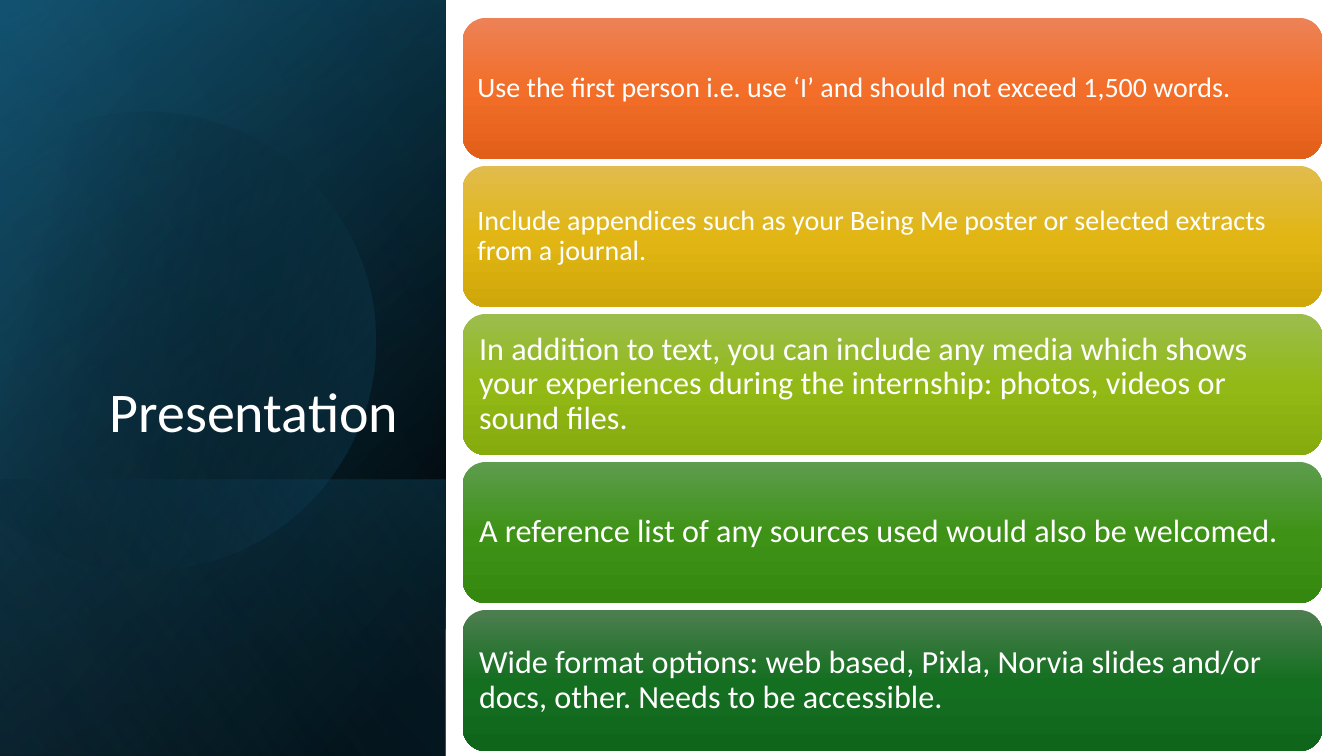
"""Build the Presentation guidance slide: a dark title panel beside five cards."""
import copy
import math

import pptx
import pptx.dml.color
import pptx.enum.shapes
import pptx.enum.text
import pptx.oxml
import pptx.oxml.ns
import pptx.util

Cm = pptx.util.Cm
Anchor = pptx.enum.text.MSO_ANCHOR
Align = pptx.enum.text.PP_ALIGN
Shape = pptx.enum.shapes.MSO_SHAPE

PANEL = (-3.91, 3.91, 19.05, 11.23)
LOWER_PANEL = (2.13, 9.96, 6.96, 11.23)
CARD_LEFT, CARD_TOP, CARD_WIDTH, CARD_HEIGHT, CARD_PITCH = 11.66, 0.45, 21.67, 3.56, 3.73

PANEL_LAYERS = [
    (PANEL, 50, [(8, "000000", 100), (100, "104862", 100)]),
    (PANEL, 30, [(0, "000000", 0), (99, "156082", 46)]),
    (LOWER_PANEL, 130, [(2, "156082", 29), (100, "000000", 30)]),
]
SHEEN = (PANEL, 120, [(0, "000000", 0), (99, "46B1E1", 11)])
DISC_STOPS = [(29, "000000", 0), (100, "156082", 43)]

CARDS = [
    ("Use the first person i.e. use ‘I’ and should not exceed 1,500 words.",
     20, 0.2, ("ED8257", "F26E29", "E25F1A")),
    ("Include appendices such as your Being Me poster or selected extracts from a journal.",
     20, 0.2, ("E1BC4E", "E1B614", "D0A70A")),
    ("In addition to text, you can include any media which shows your experiences "
     "during the internship: photos, videos or sound files.",
     23, 0.24, ("9CBD4E", "92B916", "85AB0D")),
    ("A reference list of any sources used would also be welcomed.",
     23, 0.24, ("5E9C4E", "3E9317", "35880F")),
    ("Wide format options: web based, Pixla, Norvia slides and/or docs, other. "
     "Needs to be accessible.",
     23, 0.24, ("4D7E50", "156F21", "0F661B")),
]


def colour(hex_value):
    return pptx.dml.color.RGBColor.from_string(hex_value)


def apply_format(target, values):
    for name, value in values.items():
        setattr(target, name, value)


class SlideBuilder:
    """Hold the text style and the current slide, and add its elements."""

    def __init__(self, slide, font="Calibri", text_colour="FFFFFF"):
        self.slide = slide
        self.font = font
        self.text_colour = text_colour

    def gradient(self, shape, angle, stops):
        shape.shadow.inherit = False
        shape.line.fill.background()
        shape.fill.gradient()
        shape.fill.gradient_angle = 360 - angle
        stop_list = shape.element.spPr.find(".//" + pptx.oxml.ns.qn("a:gsLst"))
        for _ in stops[2:]:
            stop_list.append(copy.deepcopy(stop_list[0]))
        for stop, element, (position, hex_value, opacity) in zip(
                shape.fill.gradient_stops, stop_list, stops):
            stop.position = position / 100
            stop.color.rgb = colour(hex_value)
            if opacity < 100:
                element[0].append(pptx.oxml.parse_xml(
                    f'<a:alpha {pptx.oxml.ns.nsdecls("a")} val="{opacity * 1000}"/>'))

    def panel(self, box, angle, stops):
        layer = self.slide.shapes.add_shape(Shape.RECTANGLE, *map(Cm, box))
        layer.rotation = 90
        layer.element.spPr.xfrm.set("flipH", "1")
        self.gradient(layer, angle, stops)

    def disc(self, centre_x, centre_y, radius, first, last, rotation, stops):
        steps = 120
        angles = [math.radians(first + (last - first) * i / steps) for i in range(steps + 1)]
        outline = [(Cm(centre_x + radius * math.cos(a)), Cm(centre_y + radius * math.sin(a)))
                   for a in angles]
        builder = self.slide.shapes.build_freeform(*outline[0])
        builder.add_line_segments(outline[1:], close=True)
        disc = builder.convert_to_shape()
        disc.rotation = rotation
        self.gradient(disc, 30, stops)

    def label(self, shape, text, size, align, frame_format):
        frame = shape.text_frame
        frame.text = text
        apply_format(frame, {"word_wrap": True,
                             "auto_size": pptx.enum.text.MSO_AUTO_SIZE.NONE, **frame_format})
        paragraph = frame.paragraphs[0]
        apply_format(paragraph, {"alignment": align, "line_spacing": 0.9})
        font = paragraph.runs[0].font
        apply_format(font, {"name": self.font, "size": pptx.util.Pt(size)})
        font.color.rgb = colour(self.text_colour)

    def title(self, text, left, top, width, height):
        heading = self.slide.shapes.title
        apply_format(heading, {"left": Cm(left), "top": Cm(top),
                               "width": Cm(width), "height": Cm(height)})
        heading.element.getparent().append(heading.element)
        self.label(heading, text, 40, Align.RIGHT, {"vertical_anchor": Anchor.BOTTOM})

    def card(self, row, text, size, inset, colours):
        card = self.slide.shapes.add_shape(
            Shape.ROUNDED_RECTANGLE, Cm(CARD_LEFT), Cm(CARD_TOP + row * CARD_PITCH),
            Cm(CARD_WIDTH), Cm(CARD_HEIGHT))
        self.gradient(card, 90, [(50 * i, c, 100) for i, c in enumerate(colours)])
        margins = {f"margin_{side}": Cm(inset) for side in ("left", "top", "right", "bottom")}
        self.label(card, text, size, Align.LEFT, {"vertical_anchor": Anchor.MIDDLE, **margins})


def main():
    deck = pptx.Presentation()
    apply_format(deck, {"slide_width": Cm(33.87), "slide_height": Cm(19.05)})
    builder = SlideBuilder(deck.slides.add_slide(deck.slide_layouts[5]))
    for layer in PANEL_LAYERS:
        builder.panel(*layer)
    builder.disc(3.66, 8.49, 5.79, -118.1, 150.3, 343.9, DISC_STOPS)
    builder.panel(*SHEEN)
    builder.title("Presentation", 1.63, 4.67, 8.66, 6.65)
    for row, card in enumerate(CARDS):
        builder.card(row, *card)
    deck.save("out.pptx")


if __name__ == "__main__":
    main()
